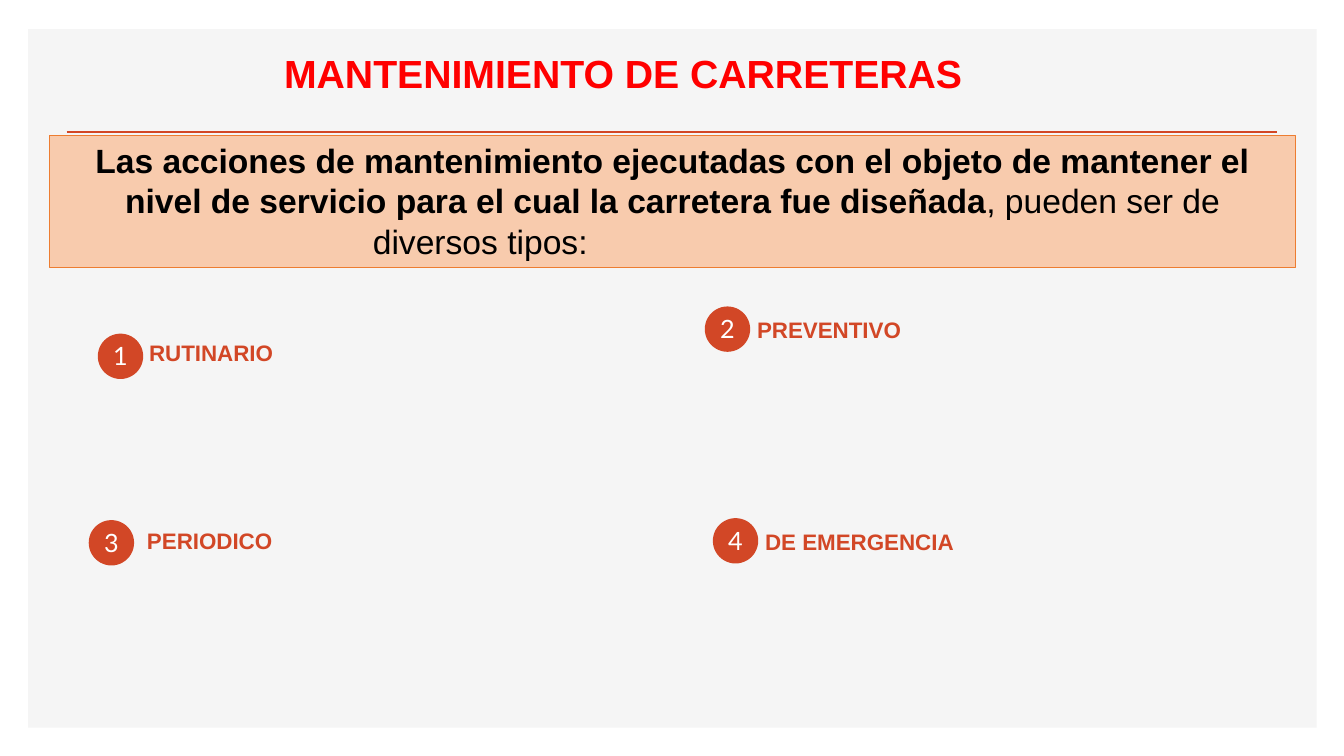
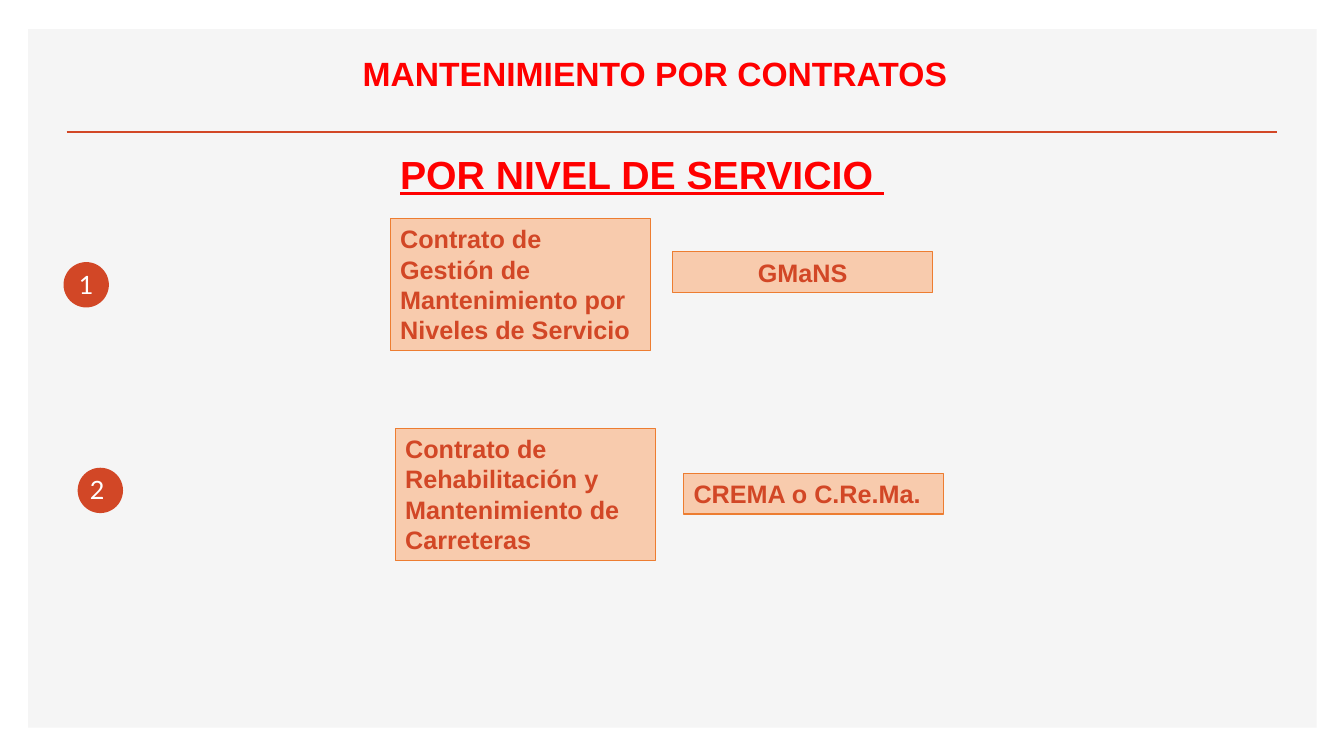
from dataclasses import dataclass

from lxml import etree
from pptx import Presentation
from pptx.dml.color import RGBColor
from pptx.enum.shapes import MSO_CONNECTOR, MSO_SHAPE
from pptx.enum.text import MSO_ANCHOR, MSO_AUTO_SIZE, PP_ALIGN
from pptx.oxml.ns import qn
from pptx.util import Emu, Pt

RECTANGLE = MSO_SHAPE.RECTANGLE
OVAL = MSO_SHAPE.OVAL
STRAIGHT = MSO_CONNECTOR.STRAIGHT
TOP = MSO_ANCHOR.TOP
NO_AUTOSIZE = MSO_AUTO_SIZE.NONE
LEFT = PP_ALIGN.LEFT
CENTER = PP_ALIGN.CENTER

EMU_PER_PX = 9144
TITLE_ONLY = 5
COLORS = {
    "panel": "F5F5F5",
    "accent": "D24726",
    "title": "FF0000",
    "box": "F8CBAD",
    "border": "ED7D31",
    "white": "FFFFFF",
    "black": "000000",
}
BADGE_SIZE = 45
DIGIT_WIDTH, DIGIT_HEIGHT, DIGIT_DROP = 61, 40, 2
BOX_WIDTH = 258
INTRO_LAST_LINE_INDENT = 311


@dataclass(frozen=True)
class Box:
    left: int
    top: int
    width: int
    height: int


@dataclass(frozen=True)
class Style:
    size: int
    color: str
    bold: bool = True
    underline: bool = False
    font: str = "Arial"


@dataclass(frozen=True)
class Badge:
    digit: str
    left: int
    top: int
    digit_shift: int = -8


@dataclass(frozen=True)
class Kind:
    badge: Badge
    text: str
    box: Box


@dataclass(frozen=True)
class Contract:
    text: str
    box: Box
    align: PP_ALIGN = LEFT


BADGE_STYLE = Style(18, "white", bold=False, font="Lato")
KIND_STYLE = Style(16, "accent")
CONTRACT_STYLE = Style(18, "accent")
INTRO_BOLD = Style(24, "black")
INTRO_PLAIN = Style(24, "black", bold=False)

KINDS = [
    Kind(Badge("1", 97, 331), "RUTINARIO", Box(138, 333, 144, 45)),
    Kind(Badge("2", 699, 304), "PREVENTIVO", Box(741, 310, 165, 39)),
    Kind(Badge("3", 88, 516), "PERIODICO", Box(136, 520, 154, 45)),
    Kind(Badge("4", 707, 514), "DE EMERGENCIA", Box(749, 521, 211, 37)),
]
CONTRACT_BADGES = [Badge("1", 63, 260), Badge("2", 77, 464, -11)]
CONTRACTS = [
    Contract(
        "Contrato de Gestión de Mantenimiento por Niveles de Servicio",
        Box(387, 217, BOX_WIDTH, 131),
    ),
    Contract("GMaNS", Box(667, 250, BOX_WIDTH, 40), CENTER),
    Contract(
        "Contrato de Rehabilitación y Mantenimiento de Carreteras",
        Box(392, 425, BOX_WIDTH, 131),
    ),
    Contract("CREMA o C.Re.Ma.", Box(678, 470, BOX_WIDTH, 40)),
]


def px(length: int) -> Emu:
    return Emu(length * EMU_PER_PX)


def color(name: str) -> RGBColor:
    return RGBColor.from_string(COLORS[name])


def frame(box: Box) -> tuple[Emu, Emu, Emu, Emu]:
    return px(box.left), px(box.top), px(box.width), px(box.height)


def add_run(paragraph, text: str, style: Style) -> None:
    run = paragraph.add_run()
    run.text = text
    run.font.name = style.font
    run.font.size = Pt(style.size)
    run.font.bold = style.bold
    run.font.underline = style.underline
    run.font.color.rgb = color(style.color)


def write(shape, text: str, style: Style, align: PP_ALIGN = LEFT, wrap: bool = True):
    text_frame = shape.text_frame
    text_frame.word_wrap = wrap
    text_frame.auto_size = NO_AUTOSIZE
    text_frame.vertical_anchor = TOP
    paragraph = text_frame.paragraphs[0]
    paragraph.alignment = align
    add_run(paragraph, text, style)
    return paragraph


def add_filled(shapes, preset: MSO_SHAPE, box: Box, fill: str, border: str = ""):
    shape = shapes.add_shape(preset, *frame(box))
    shape.shadow.inherit = False
    shape.fill.solid()
    shape.fill.fore_color.rgb = color(fill)
    if border:
        shape.line.color.rgb = color(border)
        shape.line.width = Pt(0.75)
    else:
        shape.line.fill.background()
    return shape


def add_text(shapes, box: Box, text: str, style: Style,
             align: PP_ALIGN = LEFT, wrap: bool = True):
    return write(shapes.add_textbox(*frame(box)), text, style, align, wrap)


def add_badge(slide, badge: Badge) -> None:
    shapes = slide.shapes.add_group_shape().shapes
    add_filled(shapes, OVAL, Box(badge.left, badge.top, BADGE_SIZE, BADGE_SIZE), "accent")
    digit_box = Box(badge.left + badge.digit_shift, badge.top + DIGIT_DROP,
                    DIGIT_WIDTH, DIGIT_HEIGHT)
    add_text(shapes, digit_box, badge.digit, BADGE_STYLE, CENTER)


def add_title(slide, text: str, box: Box, size: int) -> None:
    title = slide.shapes.title
    title.left, title.top, title.width, title.height = frame(box)
    write(title, text, Style(size, "title"), CENTER, wrap=False)


def move_backdrop_to_layout(slide) -> None:
    panel = add_filled(slide.shapes, RECTANGLE, Box(28, 29, 1278, 693), "panel")
    rule = slide.shapes.add_connector(STRAIGHT, px(66), px(131), px(1267), px(131))
    rule.line.color.rgb = color("accent")
    rule.line.width = Pt(2)
    etree.SubElement(rule.element.spPr, qn("a:effectLst"))
    layout_tree = slide.slide_layout.shapes.element
    for offset, shape in enumerate((panel, rule)):
        shape.element.xpath("./*/p:cNvPr")[0].set("id", str(20 + offset))
        layout_tree.insert(2 + offset, shape.element)


def build_maintenance_kinds(slide) -> None:
    add_title(slide, "MANTENIMIENTO DE CARRETERAS", Box(268, 44, 700, 57), 28)
    for kind in KINDS:
        add_badge(slide, kind.badge)
        paragraph = add_text(slide.shapes, kind.box, kind.text, KIND_STYLE)
        paragraph.line_spacing = Pt(18)
    intro = add_filled(slide.shapes, RECTANGLE, Box(49, 134, 1236, 131), "box", "border")
    opening = write(
        intro,
        "Las acciones de mantenimiento ejecutadas con el objeto de mantener el "
        "nivel de servicio para el cual la carretera fue diseñada",
        INTRO_BOLD,
        CENTER,
    )
    add_run(opening, ", pueden ser de", INTRO_PLAIN)
    closing = intro.text_frame.add_paragraph()
    closing.alignment = LEFT
    properties = closing._p.get_or_add_pPr()
    properties.set("marL", str(px(INTRO_LAST_LINE_INDENT)))
    properties.set("indent", "0")
    add_run(closing, "diversos tipos:", INTRO_PLAIN)


def build_contracts(slide) -> None:
    add_title(slide, "MANTENIMIENTO POR CONTRATOS", Box(347, 47, 605, 50), 24)
    add_text(slide.shapes, Box(387, 144, 505, 57), "POR NIVEL DE SERVICIO ",
             Style(28, "title", underline=True))
    for badge in CONTRACT_BADGES:
        add_badge(slide, badge)
    for contract in CONTRACTS:
        shape = add_filled(slide.shapes, RECTANGLE, contract.box, "box", "border")
        write(shape, contract.text, CONTRACT_STYLE, contract.align)


def main() -> None:
    presentation = Presentation()
    presentation.slide_width = px(1333)
    presentation.slide_height = px(750)
    layout = presentation.slide_layouts[TITLE_ONLY]
    kinds_slide = presentation.slides.add_slide(layout)
    contracts_slide = presentation.slides.add_slide(layout)
    move_backdrop_to_layout(kinds_slide)
    build_maintenance_kinds(kinds_slide)
    build_contracts(contracts_slide)
    presentation.save("out.pptx")


if __name__ == "__main__":
    main()
